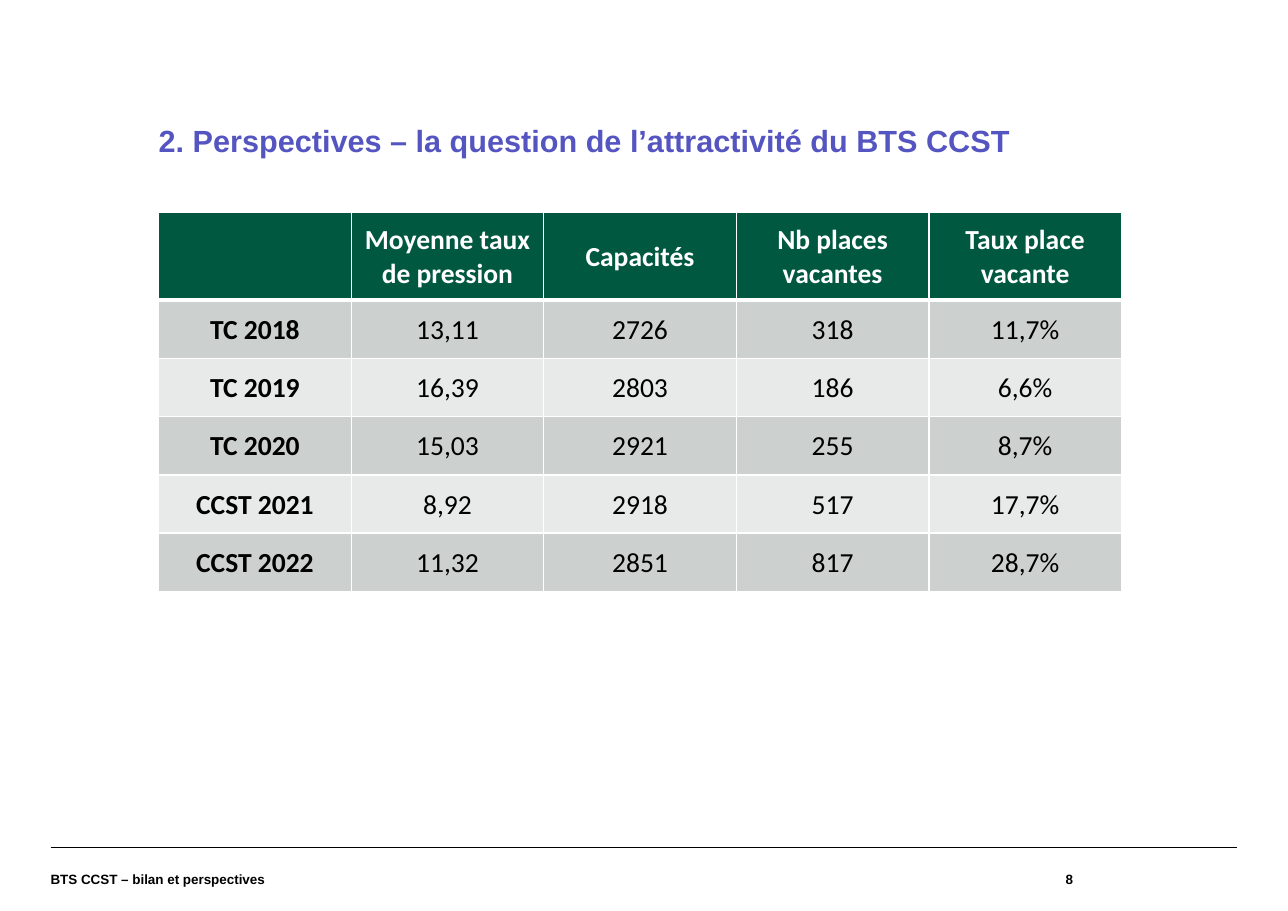
from dataclasses import dataclass

from lxml.etree import SubElement
from pptx import Presentation
from pptx.dml.color import RGBColor
from pptx.enum.shapes import MSO_CONNECTOR as Connector
from pptx.enum.text import MSO_ANCHOR as Anchor, PP_ALIGN as Align
from pptx.oxml.ns import qn
from pptx.util import Inches, Pt


@dataclass(frozen=True)
class Theme:
    ink: str = "000000"
    white: str = "FFFFFF"
    title_color: str = "5555C1"
    header_fill: str = "005841"
    bands: tuple = ("CCD1CF", "E7EAE9")
    text_font: str = "Arial"
    table_font: str = "Calibri"
    title_size: float = 20
    table_size: float = 18
    footer_size: float = 8.8
    rule_width: float = 0.8
    border_width: float = 1
    header_border_width: float = 3


HEADERS = ["", "Moyenne taux de pression", "Capacités",
           "Nb places vacantes", "Taux place vacante"]
ROWS = [
    ["TC 2018", "13,11", "2726", "318", "11,7%"],
    ["TC 2019", "16,39", "2803", "186", "6,6%"],
    ["TC 2020", "15,03", "2921", "255", "8,7%"],
    ["CCST 2021", "8,92", "2918", "517", "17,7%"],
    ["CCST 2022", "11,32", "2851", "817", "28,7%"],
]


def write(frame, text, *, font, size, color, bold=True, align=Align.LEFT, spacing=None):
    paragraph = frame.paragraphs[0]
    paragraph.alignment = align
    if spacing:
        paragraph.line_spacing = spacing
    style = paragraph.font
    if text:
        run = paragraph.add_run()
        run.text = text
        style = run.font
    style.name, style.size, style.bold = font, Pt(size), bold
    style.color.rgb = RGBColor.from_string(color)


class SlideBuilder:
    """Draws on one slide; every length is a percentage of the slide's size."""

    def __init__(self, presentation, theme):
        self.theme = theme
        self.width = presentation.slide_width
        self.height = presentation.slide_height
        self.slide = presentation.slides.add_slide(presentation.slide_layouts[6])

    def x(self, share):
        return round(self.width * share / 100)

    def y(self, share):
        return round(self.height * share / 100)

    def rule(self, left, right, top):
        line = self.slide.shapes.add_connector(
            Connector.STRAIGHT, self.x(left), self.y(top), self.x(right), self.y(top))
        line.line.color.rgb = RGBColor.from_string(self.theme.ink)
        line.line.width = Pt(self.theme.rule_width)
        SubElement(line.element.spPr, qn("a:effectLst"))

    def text(self, text, left, top, width, height, anchor=Anchor.MIDDLE, **style):
        box = self.slide.shapes.add_textbox(
            self.x(left), self.y(top), self.x(width), self.y(height))
        frame = box.text_frame
        frame.word_wrap = True
        frame.vertical_anchor = anchor
        frame.margin_left = frame.margin_right = frame.margin_top = frame.margin_bottom = 0
        write(frame, text, font=self.theme.text_font, **style)

    def border(self, cell, side, width):
        properties = cell._tc.get_or_add_tcPr()
        line = SubElement(properties, qn(f"a:ln{side}"), w=str(Pt(width)))
        fill = SubElement(line, qn("a:solidFill"))
        SubElement(fill, qn("a:srgbClr"), val=self.theme.white)

    def cell(self, cell, text, fill, color, bold, top_border, bottom_border):
        thin = self.theme.border_width
        for side, width in zip("LRTB", (thin, thin, top_border, bottom_border)):
            self.border(cell, side, width)
        cell.fill.solid()
        cell.fill.fore_color.rgb = RGBColor.from_string(fill)
        cell.vertical_anchor = Anchor.MIDDLE
        cell.margin_left = cell.margin_right = cell.margin_top = Inches(0.01)
        cell.margin_bottom = 0
        write(cell.text_frame, text, font=self.theme.table_font, color=color,
              size=self.theme.table_size, bold=bold, align=Align.CENTER)

    def table(self, headers, rows, left, top, column_width, header_height, row_height):
        theme = self.theme
        thin, thick = theme.border_width, theme.header_border_width
        table = self.slide.shapes.add_table(
            len(rows) + 1, len(headers), self.x(left), self.y(top),
            self.x(column_width * len(headers)),
            self.y(header_height + row_height * len(rows))).table
        table.horz_banding = False
        for column in table.columns:
            column.width = self.x(column_width)
        for r, values in enumerate([headers, *rows]):
            is_header = r == 0
            table.rows[r].height = self.y(header_height if is_header else row_height)
            for c, value in enumerate(values):
                self.cell(
                    table.cell(r, c), value,
                    fill=theme.header_fill if is_header else theme.bands[(r - 1) % 2],
                    color=theme.white if is_header else theme.ink,
                    bold=is_header or c == 0,
                    top_border=thick if r == 1 else thin,
                    bottom_border=thick if is_header else thin)


def main():
    presentation = Presentation()
    presentation.slide_width = Inches(11.69)
    presentation.slide_height = Inches(8.27)
    theme = Theme()
    builder = SlideBuilder(presentation, theme)

    margin, content_left, footer_top = 3.93, 12.32, 93
    footer = dict(top=footer_top, height=100 - footer_top,
                  size=theme.footer_size, color=theme.ink)
    builder.rule(margin, 100 - margin, footer_top)
    builder.text("BTS CCST – bilan et perspectives", left=margin, width=64.59, **footer)
    builder.text("8", left=68.52, width=14.8, align=Align.RIGHT, **footer)
    builder.text("2. Perspectives – la question de l’attractivité du BTS CCST",
                 left=content_left, top=13.78, width=92.13, height=14.03,
                 anchor=Anchor.TOP, size=theme.title_size,
                 color=theme.title_color, spacing=0.9)
    builder.table(HEADERS, ROWS, left=content_left, top=23.34,
                  column_width=14.95, header_height=9.63, row_height=6.39)
    presentation.save("out.pptx")


if __name__ == "__main__":
    main()
